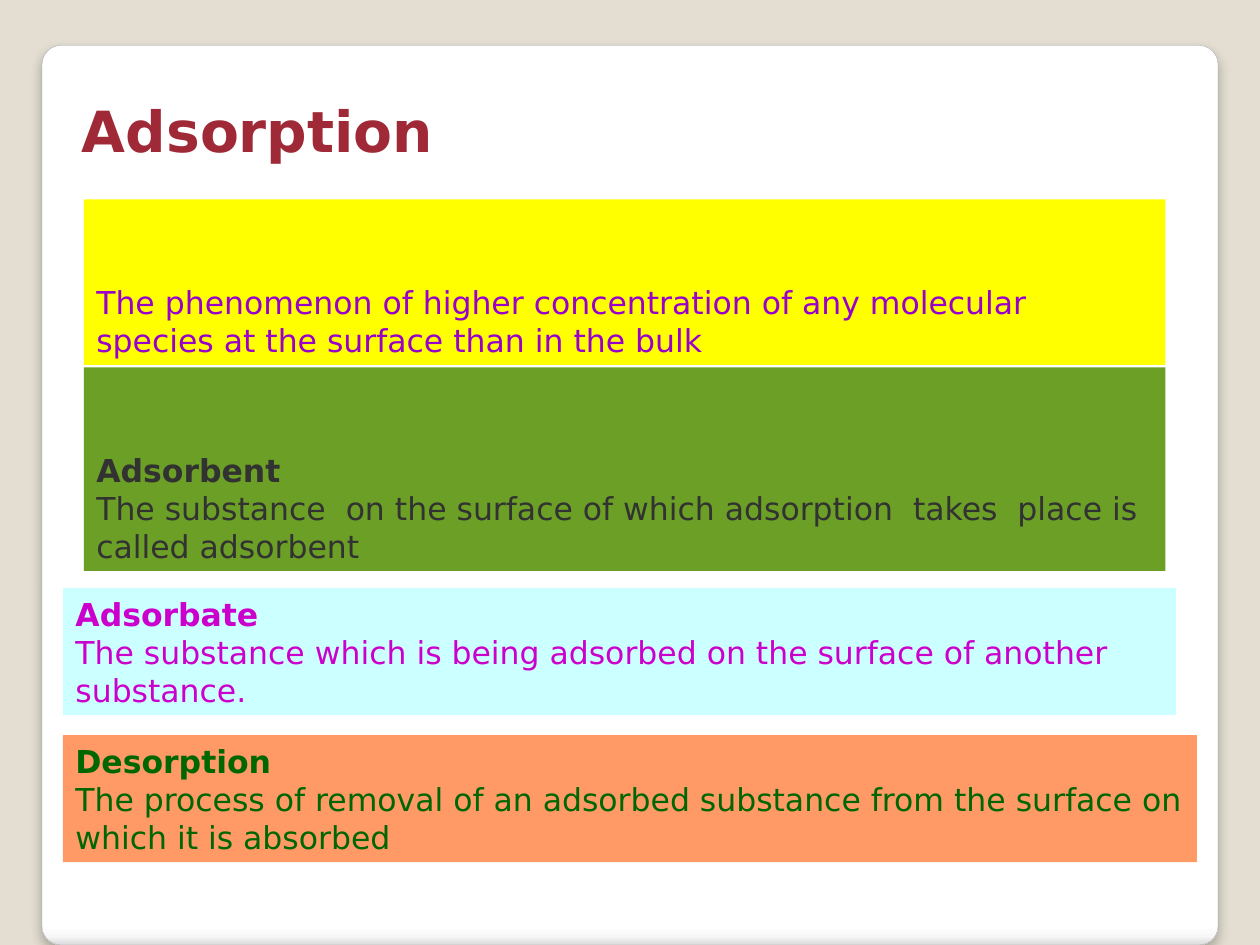
from dataclasses import dataclass

from lxml.etree import SubElement
from pptx import Presentation
from pptx.dml.color import RGBColor as RGB
from pptx.enum.shapes import MSO_SHAPE as Preset
from pptx.enum.text import MSO_ANCHOR as Anchor, MSO_AUTO_SIZE as AutoSize, PP_ALIGN as Align
from pptx.oxml import parse_xml
from pptx.oxml.ns import nsdecls, qn
from pptx.shapes.autoshape import Shape
from pptx.slide import Slide
from pptx.text.text import _Paragraph as Paragraph
from pptx.util import Pt


@dataclass(frozen=True)
class Theme:
    font: str = "DejaVu Sans"
    title_size: float = 32.4
    body_size: float = 18
    line_pitch: float = 21.8
    background: str = "E3DED1"
    title: str = "9F2936"
    card_line: str = "A4A4A4"
    card_stops: tuple = ((0, "FFFFFF"), (98, "FFFFFF"), (99, "F7F7F7"), (100, "DADADA"))


@dataclass(frozen=True)
class Definition:
    term: str
    meaning: str
    box: tuple[float, float, float, float]
    fill: str
    ink: str


THEME = Theme()

DEFINITIONS = (
    Definition("", "The phenomenon of higher concentration of any molecular species "
               "at the surface than in the bulk",
               (48, 114, 618, 94.5), "FFFF00", "9900CC"),
    Definition("Adsorbent", "The substance  on the surface of which adsorption  takes  "
               "place is called adsorbent",
               (48, 210, 618, 116.3), "6B9F25", "323232"),
    Definition("Adsorbate", "The substance which is being adsorbed on the surface of "
               "another substance.",
               (36, 336, 636, 72.6), "CCFFFF", "CC00CC"),
    Definition("Desorption", "The process of removal of an adsorbed substance from the "
               "surface on which it is absorbed",
               (36, 420, 648, 72.6), "FF9966", "006600"),
)


def apply(target: object, values: dict) -> None:
    for name, value in values.items():
        setattr(target, name, value)


def write(paragraph: Paragraph, words: str, size: float, ink: str, bold: bool) -> None:
    apply(paragraph, {"text": words, "alignment": Align.LEFT})
    font = paragraph.runs[0].font
    apply(font, {"name": THEME.font, "size": Pt(size), "bold": bold})
    font.color.rgb = RGB.from_string(ink)


def add_box(slide: Slide, preset: Preset, box: tuple) -> Shape:
    shape = slide.shapes.add_shape(preset, *map(Pt, box))
    shape.shadow.inherit = False
    return shape


def add_card(slide: Slide) -> None:
    """Draw the shaded white panel behind everything else."""
    card = add_box(slide, Preset.ROUNDED_RECTANGLE, (24, 26, 672, 514))
    card.adjustments[0] = 0.021
    card.line.color.rgb = RGB.from_string(THEME.card_line)
    card.line.width = Pt(0.16)

    card.fill.gradient()
    card.fill.gradient_angle = 270
    stops = card._element.spPr.find(qn("a:gradFill")).find(qn("a:gsLst"))
    stops.clear()
    for percent, color in THEME.card_stops:
        stop = SubElement(stops, qn("a:gs"), pos=str(percent * 1000))
        SubElement(stop, qn("a:srgbClr"), val=color)

    effects = card._element.spPr.find(qn("a:effectLst"))
    effects.append(parse_xml(
        f'<a:outerShdw {nsdecls("a")} blurRad="{Pt(6)}" dist="{Pt(4)}" dir="5400000" '
        'algn="t" rotWithShape="0"><a:srgbClr val="000000"><a:alpha val="25000"/>'
        "</a:srgbClr></a:outerShdw>"))
    slide.shapes.title._element.addprevious(card._element)


def add_title(slide: Slide, words: str) -> None:
    heading = slide.shapes.title
    apply(heading, {"left": Pt(39.6), "top": Pt(54), "width": Pt(644.4), "height": Pt(42)})
    apply(heading.text_frame, {"vertical_anchor": Anchor.BOTTOM, "word_wrap": True,
                               "auto_size": AutoSize.NONE, "margin_bottom": Pt(2.6)})
    write(heading.text_frame.paragraphs[0], words, THEME.title_size, THEME.title, True)


def add_definition(slide: Slide, entry: Definition) -> None:
    band = add_box(slide, Preset.RECTANGLE, entry.box)
    band.fill.solid()
    band.fill.fore_color.rgb = RGB.from_string(entry.fill)
    band.line.fill.background()
    frame = band.text_frame
    apply(frame, {"vertical_anchor": Anchor.BOTTOM, "word_wrap": True})
    paragraph = frame.paragraphs[0]
    if entry.term:
        write(paragraph, entry.term, THEME.body_size, entry.ink, True)
        paragraph = frame.add_paragraph()
    write(paragraph, entry.meaning, THEME.body_size, entry.ink, False)
    for line in frame.paragraphs:
        line.line_spacing = Pt(THEME.line_pitch)


def main() -> None:
    deck = Presentation()
    apply(deck, {"slide_width": Pt(720), "slide_height": Pt(540)})
    slide = deck.slides.add_slide(deck.slide_layouts.get_by_name("Title Only"))
    slide.background.fill.solid()
    slide.background.fill.fore_color.rgb = RGB.from_string(THEME.background)
    add_card(slide)
    add_title(slide, "Adsorption")
    for entry in DEFINITIONS:
        add_definition(slide, entry)
    deck.save("out.pptx")


if __name__ == "__main__":
    main()
